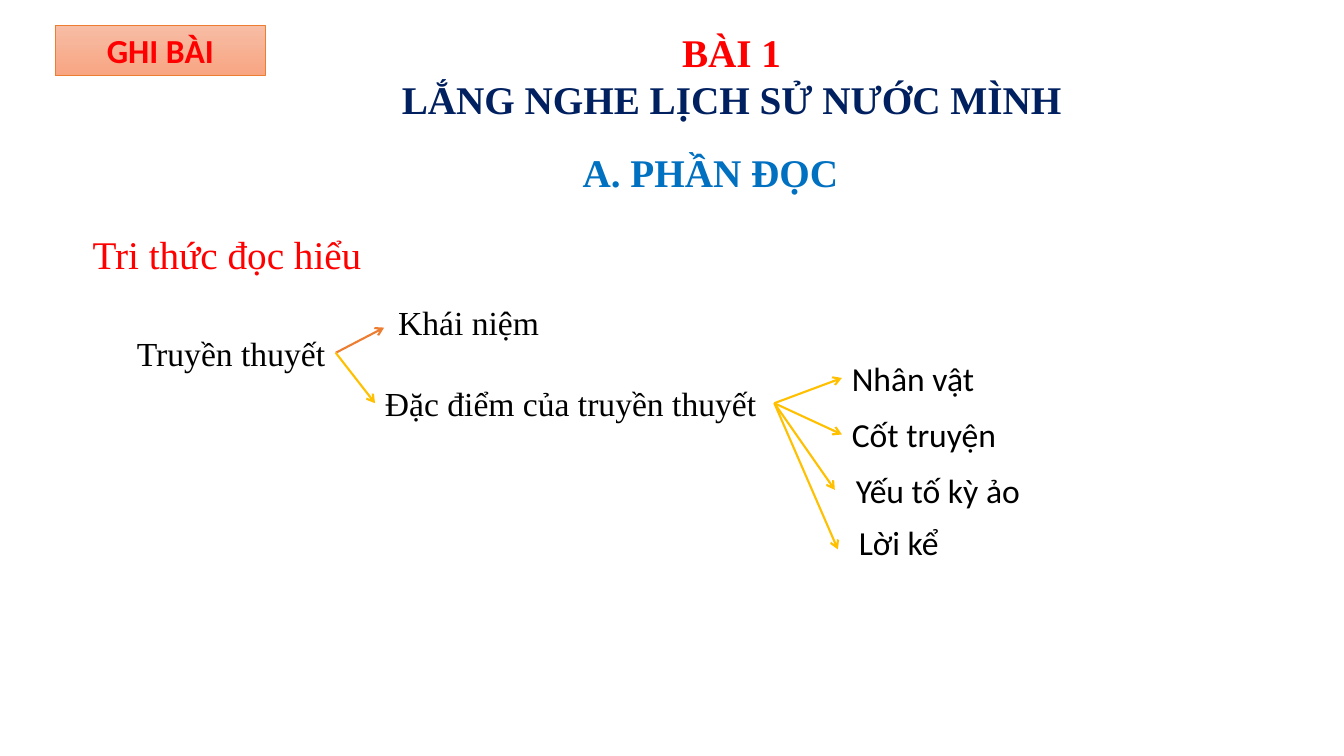
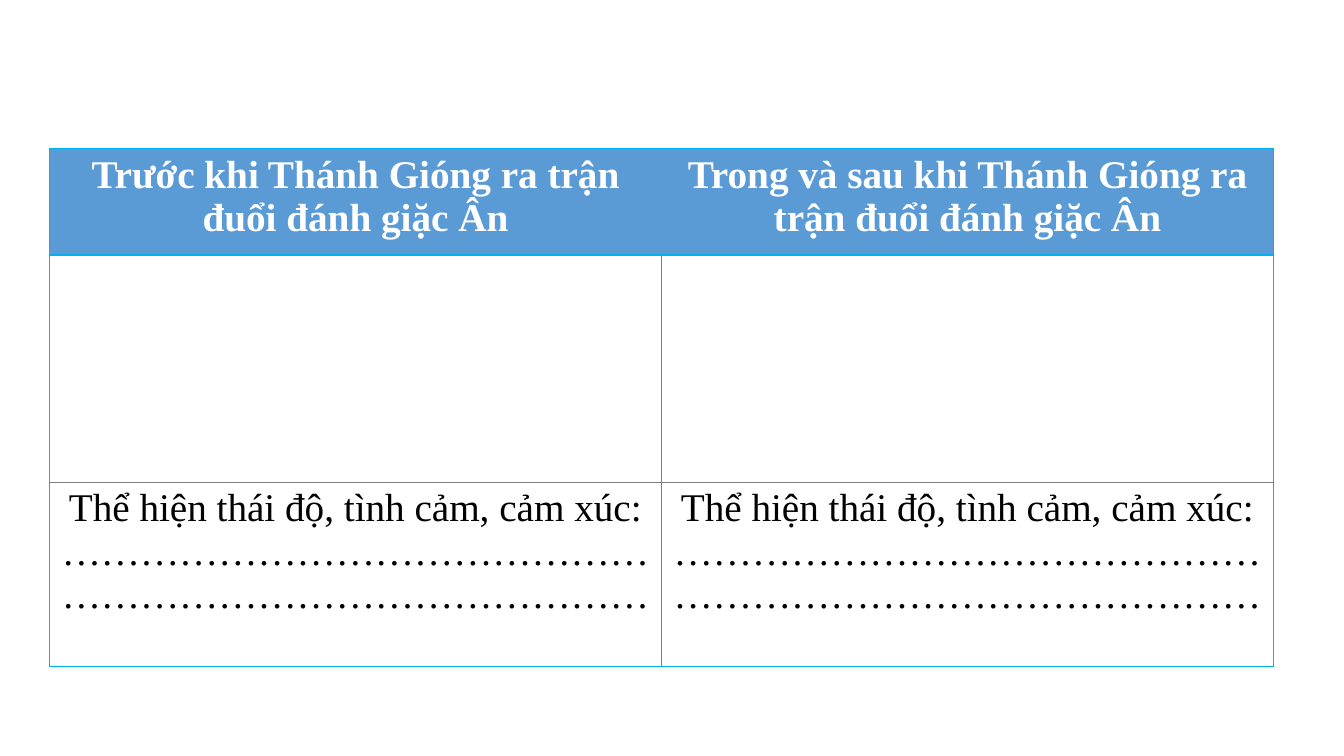
from pptx import Presentation, util as u
from pptx.dml.color import RGBColor
from pptx.enum import shapes, text
from pptx.oxml.ns import qn
from lxml import etree

COLORS = {
    "red": "FF0000", "navy": "002060", "blue": "0070C0", "black": "000000",
    "white": "FFFFFF", "orange": "ED7D31", "gold": "FFC000",
    "header": "5B9BD5", "border": "00B0F0", "divider": "7F7F7F",
    "tag top": "F7BDA5", "tag bottom": "F8A582",
}
SERIF, SANS = "Times New Roman", "Calibri"

# Text styles
TITLE = dict(name=SERIF, size=28, bold=True, color="red")
SUBTITLE = {**TITLE, "color": "navy"}
SECTION = {**TITLE, "color": "blue"}
TOPIC = {**TITLE, "bold": False}
IDEA = dict(name=SERIF, size=24, bold=False, color="black")
FEATURE = {**IDEA, "name": SANS}
TAG = dict(name=SANS, size=24, bold=True, color="red")
TABLE_HEAD = {**TITLE, "color": "white"}
TABLE_BODY = {**TOPIC, "color": "black"}

# Slide 1: lesson outline
LESSON = [("BÀI 1", TITLE), ("LẮNG NGHE LỊCH SỬ NƯỚC MÌNH", SUBTITLE)]
LESSON_BOX = (3.48, 0.23, 7.55, 1.04)
TAG_BOX = (0.55, 0.25, 2.08, 0.5)
LABELS = [
    ("A. PHẦN ĐỌC", SECTION, (5.68, 1.42, 2.74, 0.57)),
    ("Tri thức đọc hiểu", TOPIC, (0.82, 2.24, 2.87, 0.57)),
    ("Truyền thuyết", IDEA, (1.26, 3.25, 2.07, 0.5)),
    ("Khái niệm", IDEA, (3.85, 2.95, 1.6, 0.5)),
    ("Đặc điểm của truyền thuyết", IDEA, (3.72, 3.75, 3.96, 0.5)),
    ("Nhân vật", FEATURE, (8.35, 3.5, 1.43, 0.5)),
    ("Cốt truyện", FEATURE, (8.35, 4.06, 1.65, 0.5)),
    ("Yếu tố kỳ ảo", FEATURE, (8.39, 4.61, 1.84, 0.5)),
    ("Lời kể", FEATURE, (8.42, 5.13, 1, 0.5)),
]
# Branch: parent, child, colour, free end point (None: joined to the child)
BRANCHES = [
    ("Truyền thuyết", "Khái niệm", "orange", (3.81, 3.25)),
    ("Truyền thuyết", "Đặc điểm của truyền thuyết", "gold", None),
    ("Đặc điểm của truyền thuyết", "Nhân vật", "gold", None),
    ("Đặc điểm của truyền thuyết", "Cốt truyện", "gold", None),
    ("Đặc điểm của truyền thuyết", "Yếu tố kỳ ảo", "gold", (8.28, 4.86)),
    ("Đặc điểm của truyền thuyết", "Lời kể", "gold", (8.31, 5.45)),
]

# Slide 2: comparison table
FEELINGS = ["Thể hiện thái độ, tình cảm, cảm xúc:", "…" * 30]
COMPARISON = [
    [["Trước khi Thánh Gióng ra trận đuổi đánh giặc Ân"],
     ["Trong và sau khi Thánh Gióng ra trận đuổi đánh giặc Ân"]],
    [[""], [""]],
    [FEELINGS, FEELINGS],
]
TABLE_LEFT, TABLE_TOP, COLUMN_WIDTH = 0.49, 1.47, 6.07
ROW_HEIGHTS = [1.06, 2.25, 1.83]


def inches(values):
    return [u.Inches(v) for v in values]


def rgb(name):
    return RGBColor.from_string(COLORS[name])


def write(frame, lines, align=None):
    """Fill a text frame with (wording, style) paragraphs."""
    for i, (wording, style) in enumerate(lines):
        paragraph = frame.paragraphs[0] if i == 0 else frame.add_paragraph()
        paragraph.alignment = align
        font = paragraph.font
        if wording:
            run = paragraph.add_run()
            run.text = wording
            font = run.font
        for key, value in style.items():
            if key == "color":
                font.color.rgb = rgb(value)
            else:
                setattr(font, key, u.Pt(value) if key == "size" else value)


def add_label(slide, box, lines, wrap=False, align=None):
    label = slide.shapes.add_textbox(*inches(box))
    label.text_frame.word_wrap = wrap
    label.text_frame.auto_size = text.MSO_AUTO_SIZE.SHAPE_TO_FIT_TEXT
    write(label.text_frame, lines, align)
    return label


def add_tag(slide, wording):
    tag = slide.shapes.add_shape(shapes.MSO_SHAPE.RECTANGLE, *inches(TAG_BOX))
    tag.shadow.inherit = False
    tag.fill.gradient()
    tag.fill.gradient_angle = 270
    for stop, name in zip(tag.fill.gradient_stops, ("tag top", "tag bottom")):
        stop.color.rgb = rgb(name)
    tag.line.color.rgb = rgb("orange")
    tag.line.width = u.Pt(0.5)
    tag.text_frame.word_wrap = True
    write(tag.text_frame, [(wording, TAG)], text.PP_ALIGN.CENTER)


def add_branch(slide, parent, child, color, free_end):
    start = (parent.left + parent.width, parent.top + parent.height // 2)
    end = inches(free_end) if free_end else (child.left, child.top + child.height // 2)
    branch = slide.shapes.add_connector(shapes.MSO_CONNECTOR.STRAIGHT, *start, *end)
    branch.begin_connect(parent, 3)
    if not free_end:
        branch.end_connect(child, 1)
    branch.line.color.rgb = rgb(color)
    branch.line.width = u.Pt(1.5)
    etree.SubElement(branch.line._get_or_add_ln(), qn("a:tailEnd"), type="arrow")
    etree.SubElement(branch._element.spPr, qn("a:effectLst"))


def set_borders(cell, sides):
    """Put border lines, a dict of side to colour, ahead of the cell's fill."""
    properties = cell._tc.get_or_add_tcPr()
    for i, (side, color) in enumerate(sides.items()):
        width = u.Pt(1 if color == "border" else 0.5)
        line = etree.Element(qn(f"a:ln{side}"), w=str(width))
        fill = etree.SubElement(line, qn("a:solidFill"))
        etree.SubElement(fill, qn("a:srgbClr"), val=COLORS[color])
        properties.insert(i, line)


def build_outline(slide):
    add_label(slide, LESSON_BOX, LESSON, wrap=True, align=text.PP_ALIGN.CENTER)
    labels = {wording: add_label(slide, box, [(wording, style)])
              for wording, style, box in LABELS}
    for parent, child, color, free_end in BRANCHES:
        add_branch(slide, labels[parent], labels[child], color, free_end)
    add_tag(slide, "GHI BÀI")


def build_comparison(slide):
    rows, columns = len(COMPARISON), len(COMPARISON[0])
    box = inches((TABLE_LEFT, TABLE_TOP, COLUMN_WIDTH * columns, sum(ROW_HEIGHTS)))
    table = slide.shapes.add_table(rows, columns, *box).table
    table.horz_banding = False
    for column in table.columns:
        column.width = u.Inches(COLUMN_WIDTH)
    for r, entries in enumerate(COMPARISON):
        table.rows[r].height = u.Inches(ROW_HEIGHTS[r])
        style = TABLE_BODY if r else TABLE_HEAD
        for c, lines in enumerate(entries):
            cell = table.cell(r, c)
            cell.fill.solid()
            cell.fill.fore_color.rgb = rgb("white" if r else "header")
            write(cell.text_frame, [(line, style) for line in lines],
                  text.PP_ALIGN.CENTER)
            inner = "divider" if r else "header"
            set_borders(cell, {
                "L": inner if c else "border",
                "R": inner if c < columns - 1 else "border",
                "T": "divider" if r == 2 else "border",
                "B": "divider" if r == 1 else "border",
            })


def main():
    deck = Presentation()
    deck.slide_width, deck.slide_height = inches((13.33, 7.5))
    for build in (build_outline, build_comparison):
        build(deck.slides.add_slide(deck.slide_layouts[6]))
    deck.save("out.pptx")


if __name__ == "__main__":
    main()
